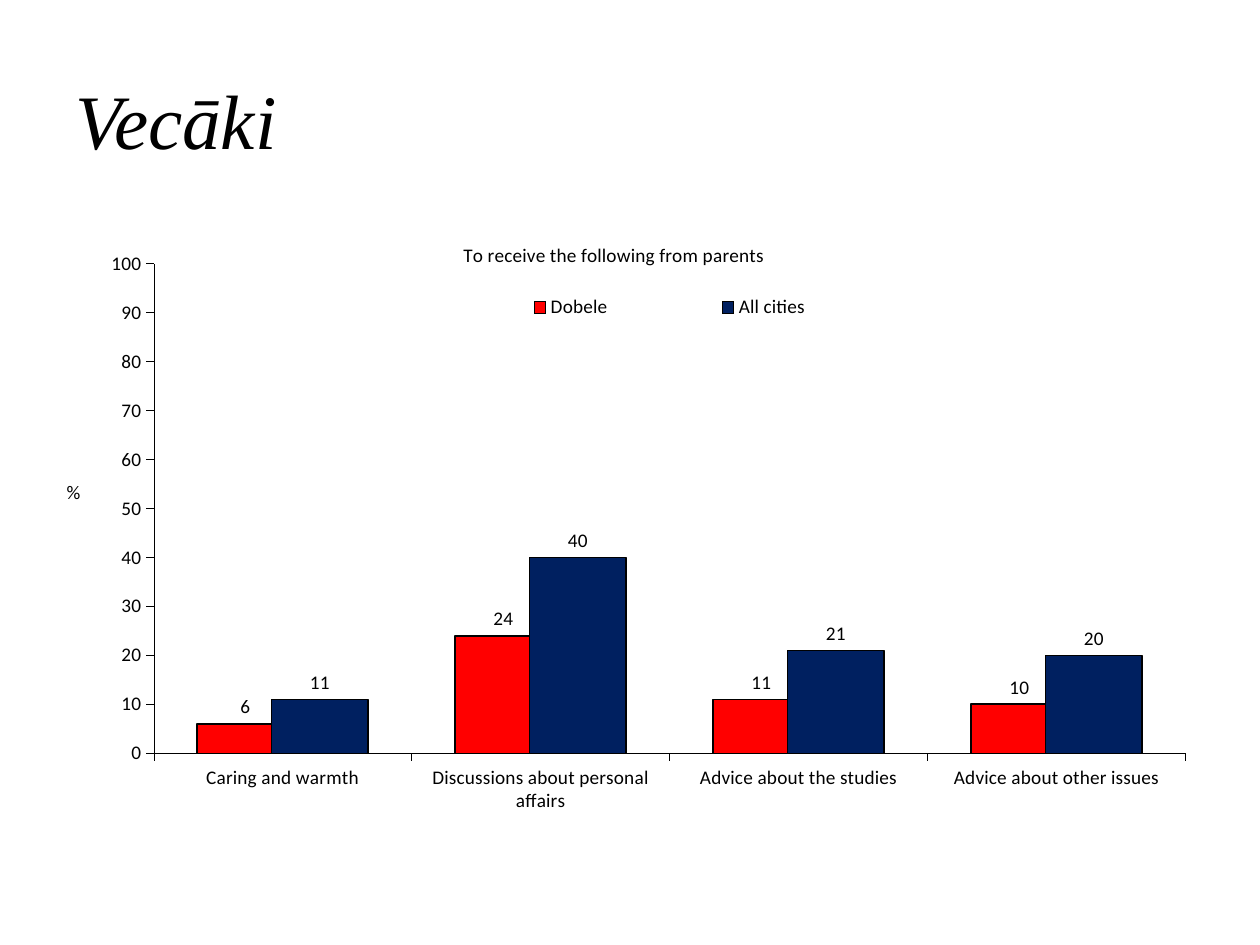
from lxml.etree import SubElement
from pptx import Presentation
from pptx.chart.data import CategoryChartData
from pptx.dml.color import RGBColor
from pptx.enum.chart import XL_CHART_TYPE, XL_LABEL_POSITION, XL_LEGEND_POSITION, XL_TICK_MARK
from pptx.enum.text import MSO_ANCHOR, PP_ALIGN
from pptx.oxml.ns import qn
from pptx.util import Pt

SCALE = 914400 / 126


def color(value):
    return RGBColor.from_string(value)


def place(parent, index, fractions, target=None):
    for old in parent.findall(qn("c:layout")):
        parent.remove(old)
    layout = SubElement(parent, qn("c:layout"))
    manual = SubElement(layout, qn("c:manualLayout"))
    values = {"layoutTarget": target} if target else {}
    values.update(xMode="edge", yMode="edge")
    values.update(zip("xywh", fractions))
    for name, value in values.items():
        SubElement(manual, qn(f"c:{name}")).set("val", str(value))
    parent.insert(index, layout)


presentation = Presentation()
presentation.slide_width = round(1260 * SCALE)
presentation.slide_height = round(945 * SCALE)
slide = presentation.slides.add_slide(presentation.slide_layouts[5])

title = slide.shapes.title
for name, value in {"left": 63, "top": 40, "width": 1134, "height": 158}.items():
    setattr(title, name, round(value * SCALE))
title.text_frame.text = "Vecāki"
title.text_frame.vertical_anchor = MSO_ANCHOR.MIDDLE
paragraph = title.text_frame.paragraphs[0]
paragraph.alignment = PP_ALIGN.LEFT
font = paragraph.runs[0].font
for name, value in {"name": "Times New Roman", "size": Pt(44), "italic": True}.items():
    setattr(font, name, value)
font.color.rgb = color("000000")

chart_data = CategoryChartData(number_format="0")
chart_data.categories = [
    "Caring and warmth",
    "Discussions about personal affairs",
    "Advice about the studies",
    "Advice about other issues",
]
chart_data.add_series("Dobele", (6, 24, 11, 10))
chart_data.add_series("All cities", (11, 40, 21, 20))
box = [round(length * SCALE) for length in (63, 220, 1134, 624)]
chart = slide.shapes.add_chart(XL_CHART_TYPE.COLUMN_CLUSTERED, *box, chart_data).chart

chart.has_title = True
chart.chart_title.text_frame.text = "To receive the following from parents"
chart.chart_title.include_in_layout = False
chart.value_axis.has_title = True
chart.value_axis.axis_title.text_frame.text = "%"
chart_fonts = [chart.font] + [
    heading.text_frame.paragraphs[0].runs[0].font
    for heading in (chart.chart_title, chart.value_axis.axis_title)
]
for font in chart_fonts:
    for name, value in {"name": "Calibri", "size": Pt(11), "bold": False}.items():
        setattr(font, name, value)
    font.color.rgb = color("000000")

chart.has_legend = True
chart.legend.position = XL_LEGEND_POSITION.RIGHT
chart.legend.include_in_layout = False

value_format = {
    "minimum_scale": 0,
    "maximum_scale": 100,
    "major_unit": 10,
    "has_major_gridlines": False,
}
for name, value in value_format.items():
    setattr(chart.value_axis, name, value)
chart.value_axis.tick_labels.number_format = "0"
chart.value_axis.tick_labels.number_format_is_linked = False
for axis in (chart.category_axis, chart.value_axis):
    axis.major_tick_mark = XL_TICK_MARK.OUTSIDE
    axis.format.line.color.rgb = color("000000")
    axis.format.line.width = Pt(0.25)

plot = chart.plots[0]
for name, value in {"gap_width": 90, "overlap": 23, "vary_by_categories": False}.items():
    setattr(plot, name, value)
label_format = {
    "show_value": True,
    "position": XL_LABEL_POSITION.OUTSIDE_END,
    "number_format": "0",
    "number_format_is_linked": False,
}
for series, fill in zip(plot.series, ("FF0000", "002060")):
    series.format.fill.solid()
    series.format.fill.fore_color.rgb = color(fill)
    series.format.line.color.rgb = color("000000")
    series.format.line.width = Pt(1)
    for name, value in label_format.items():
        setattr(series.data_labels, name, value)

chart_root = chart.element
axis_title = chart_root.xpath(".//c:valAx/c:title")[0]
body = axis_title.xpath(".//a:bodyPr")[0]
body.set("rot", "0")
body.set("vert", "horz")
place(chart_root.xpath("c:chart/c:title")[0], 1, (0.35, 0.03))
place(axis_title, 1, (0, 0.41))
place(chart_root.xpath(".//c:legend")[0], 1, (0.32, 0.11, 0.43, 0.06))
place(chart_root.xpath(".//c:plotArea")[0], 0, (0.08, 0.07, 0.91, 0.785), "inner")

presentation.save("out.pptx")
